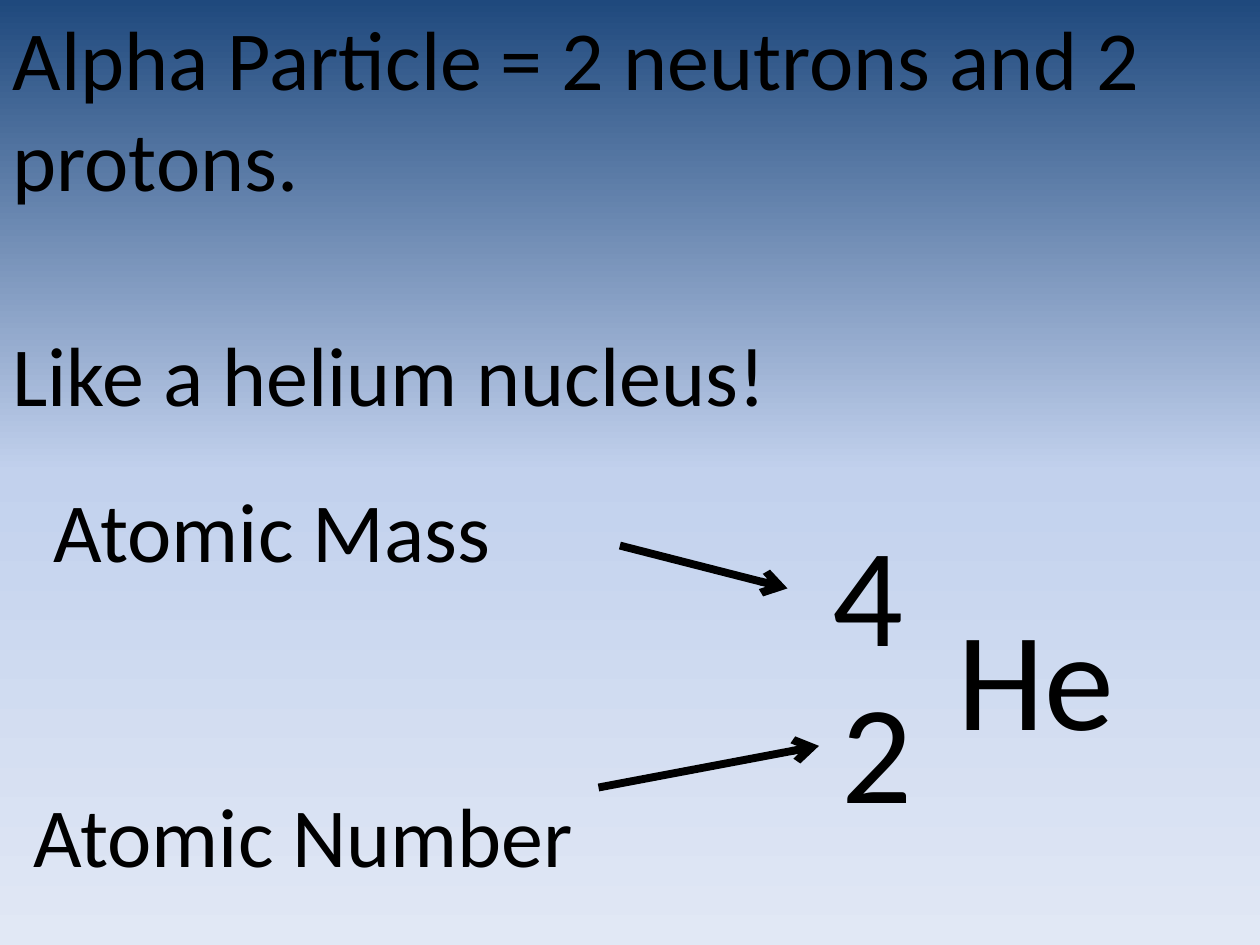
"""Build a slide that explains the alpha particle as a helium nucleus."""
import copy

import pptx
import pptx.dml.color
import pptx.enum.shapes
import pptx.enum.text
import pptx.oxml
import pptx.oxml.ns
import pptx.util
from pptx.util import Inches

BLACK = pptx.dml.color.RGBColor(0x00, 0x00, 0x00)
NAVY = pptx.dml.color.RGBColor(0x1F, 0x49, 0x7D)
SKY = pptx.dml.color.RGBColor(0xC2, 0xD1, 0xED)
MIST = pptx.dml.color.RGBColor(0xE1, 0xE8, 0xF5)


class SlideBuilder:
    """Hold the style and the current slide."""

    font = "Calibri"
    body_size = 48
    symbol_size = 80
    arrow_width = 4.5

    def __init__(self, slide):
        self.slide = slide

    def background(self, colors):
        fill = self.slide.background.fill
        fill.gradient()
        fill.gradient_angle = 270
        stops = self.slide.element.find(".//" + pptx.oxml.ns.qn("a:gsLst"))
        while len(stops) < len(colors):
            stops.append(copy.deepcopy(stops[0]))
        for index, (stop, color) in enumerate(zip(fill.gradient_stops, colors)):
            stop.color.rgb = color
            stop.position = index / (len(colors) - 1)

    def set_text(self, holder, text, size):
        frame = holder.text_frame
        frame.text = text
        frame.word_wrap = True
        frame.auto_size = pptx.enum.text.MSO_AUTO_SIZE.SHAPE_TO_FIT_TEXT
        frame.vertical_anchor = pptx.enum.text.MSO_ANCHOR.TOP
        paragraph = frame.paragraphs[0]
        paragraph.alignment = pptx.enum.text.PP_ALIGN.LEFT
        font = paragraph.runs[0].font
        font.name = self.font
        font.size = pptx.util.Pt(size)
        font.color.rgb = BLACK

    def title(self, text, left, top, width, height):
        heading = self.slide.shapes.title
        heading.left, heading.top = Inches(left), Inches(top)
        heading.width, heading.height = Inches(width), Inches(height)
        self.set_text(heading, text, self.body_size)

    def text(self, text, left, top, width, height, size=body_size, parent=None):
        shapes = (parent or self.slide).shapes
        box = shapes.add_textbox(Inches(left), Inches(top), Inches(width), Inches(height))
        self.set_text(box, text, size)

    def symbol(self, text, left, top, width):
        self.text(text, left, top, width, 1.45, self.symbol_size)

    def arrow(self, start, end, parent):
        pointer = parent.shapes.add_connector(
            pptx.enum.shapes.MSO_CONNECTOR.STRAIGHT,
            *(Inches(value) for value in (*start, *end)),
        )
        pointer.line.color.rgb = BLACK
        pointer.line.width = pptx.util.Pt(self.arrow_width)
        namespace = pptx.oxml.ns.nsdecls("a")
        properties = pointer.element.spPr
        outline = properties.find(pptx.oxml.ns.qn("a:ln"))
        outline.append(pptx.oxml.parse_xml(f'<a:tailEnd {namespace} type="arrow"/>'))
        properties.append(pptx.oxml.parse_xml(f"<a:effectLst {namespace}/>"))

    def callout(self, text, left, top, width, start, end):
        group = self.slide.shapes.add_group_shape()
        self.text(text, left, top, width, 0.91, parent=group)
        self.arrow(start, end, group)


def main():
    deck = pptx.Presentation()
    deck.slide_width, deck.slide_height = Inches(10), Inches(7.5)
    title_only = deck.slide_layouts[5]
    builder = SlideBuilder(deck.slides.add_slide(title_only))

    builder.background([NAVY, SKY, MIST])
    builder.title("Alpha Particle = 2 neutrons and 2 protons.", 0, 0, 10, 1.72)
    builder.text("Like a helium nucleus!", 0, 2.51, 10, 0.91)
    builder.symbol("He", 7.5, 4.64, 2.17)
    builder.symbol("4", 6.51, 3.97, 1.5)
    builder.symbol("2", 6.58, 5.22, 1.5)
    builder.callout("Atomic Mass", 0.33, 3.75, 4.75, (4.92, 4.33), (6.25, 4.67))
    builder.callout("Atomic Number", 0.17, 6.17, 5.75, (4.75, 6.25), (6.5, 5.92))
    deck.save("out.pptx")


if __name__ == "__main__":
    main()
